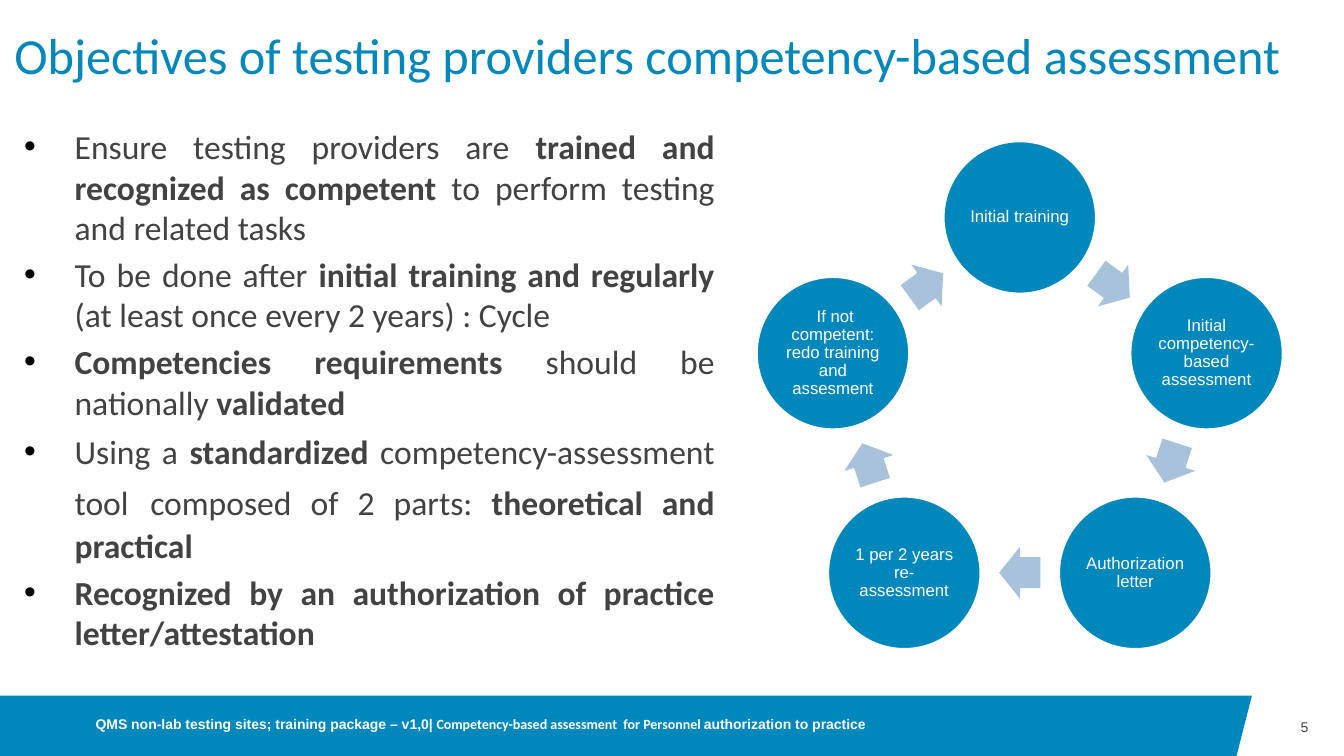
from math import cos, radians, sin

from lxml.etree import SubElement
from pptx import Presentation
from pptx.dml.color import RGBColor
from pptx.enum.shapes import MSO_SHAPE
from pptx.enum.text import MSO_ANCHOR, MSO_AUTO_SIZE, PP_ALIGN
from pptx.oxml.ns import qn
from pptx.util import Cm, Pt

BLUE, LIGHT_BLUE, GREY, WHITE, BLACK = "0087BC", "A7C2DA", "424242", "FFFFFF", "000000"


def color(hex_code):
    return RGBColor.from_string(hex_code)


def prepare_frame(shape, margin):
    frame = shape.text_frame
    frame.word_wrap = True
    frame.auto_size = MSO_AUTO_SIZE.NONE
    frame.vertical_anchor = MSO_ANCHOR.MIDDLE
    frame.margin_left = frame.margin_right = Cm(margin)
    frame.margin_top = frame.margin_bottom = Cm(margin)
    return frame


presentation = Presentation()
presentation.slide_width, presentation.slide_height = Cm(33.87), Cm(19.05)
slide = presentation.slides.add_slide(presentation.slide_layouts[1])
title, body = slide.placeholders

# Footer band
builder = slide.shapes.build_freeform(Cm(0), Cm(17.53))
builder.add_line_segments(
    [(Cm(31.55), Cm(17.53)), (Cm(31.15), Cm(19.1)), (Cm(0), Cm(19.1))], close=True)
band = builder.convert_to_shape()
band.shadow.inherit = False
band.fill.solid()
band.fill.fore_color.rgb = color(BLUE)
band.line.fill.background()

# Slide number
number_box = slide.shapes.add_textbox(Cm(31.55), Cm(17.53), Cm(1.42), Cm(1.6))
paragraph = prepare_frame(number_box, 0).paragraphs[0]
paragraph.text = "5"
paragraph.alignment = PP_ALIGN.RIGHT
paragraph.font.name, paragraph.font.size = "Arial", Pt(10)
paragraph.font.color.rgb = color(GREY)

# Title
title.left, title.top, title.width, title.height = Cm(0.36), Cm(0.1), Cm(33.87), Cm(2.74)
paragraph = prepare_frame(title, 0).paragraphs[0]
paragraph.text = "Objectives of testing providers competency-based assessment"
paragraph.alignment = PP_ALIGN.LEFT
paragraph.line_spacing = 0.9
paragraph.font.name, paragraph.font.size = "Calibri", Pt(36)
paragraph.font.color.rgb = color(BLUE)

# Objectives: space before, then runs of (text, bold, size)
objectives = [
    (0, [("Ensure testing providers are ", False, 24),
         ("trained and recognized as competent", True, 24),
         (" to perform testing and related tasks", False, 24)]),
    (4.8, [("To be done after ", False, 24),
           ("initial training and regularly ", True, 24),
           ("(at least once every 2 years) : Cycle", False, 24)]),
    (4.8, [("Competencies requirements ", True, 24),
           ("should be nationally ", False, 24),
           ("validated", True, 24)]),
    (6.4, [("Using a ", False, 24),
           ("standardized", True, 24),
           (" competency-assessment tool", False, 24),
           (" ", False, 32),
           ("composed of 2 parts: ", False, 24),
           ("theoretical and practical ", True, 24)]),
    (4.8, [("Recognized by an authorization of practice letter/attestation", True, 24)]),
]
body.left, body.top, body.width, body.height = Cm(0.36), Cm(3.05), Cm(17.9), Cm(14.22)
frame = prepare_frame(body, 0.13)
frame.vertical_anchor = MSO_ANCHOR.TOP
frame.margin_left = frame.margin_right = Cm(0.25)
for index, (space_before, runs) in enumerate(objectives):
    paragraph = frame.add_paragraph() if index else frame.paragraphs[0]
    paragraph.alignment = PP_ALIGN.JUSTIFY
    paragraph.space_before = Pt(space_before)
    properties = paragraph._p.get_or_add_pPr()
    properties.set("marL", str(Cm(1.27)))
    properties.set("indent", str(Cm(-1.27)))
    bullet_color = SubElement(properties, qn("a:buClr"))
    SubElement(bullet_color, qn("a:srgbClr"), val=BLACK)
    SubElement(properties, qn("a:buFont"), typeface="Arial")
    SubElement(properties, qn("a:buChar"), char="•")
    paragraph.font.name = "Calibri"
    paragraph.font.color.rgb = color(GREY)
    for text, bold, size in runs:
        run = paragraph.add_run()
        run.text = text
        run.font.bold, run.font.size = bold, Pt(size)

# Assessment cycle: steps every 72 degrees, an arrow halfway to the next step
steps = [
    "Initial training",
    "Initial competency-based assessment",
    "Authorization letter",
    "1 per 2 years re-assessment",
    " If not competent: redo training and assesment",
]
center_x, center_y = 25.7, 10.43
step_radius, arrow_radius = 4.95, 4.0
diameter, arrow_width, arrow_height = 3.86, 1.04, 1.3
step_angle = 360 / len(steps)
for index, step in enumerate(steps):
    angle = index * step_angle
    x = center_x + step_radius * sin(radians(angle))
    y = center_y - step_radius * cos(radians(angle))
    circle = slide.shapes.add_shape(
        MSO_SHAPE.OVAL, Cm(x - diameter / 2), Cm(y - diameter / 2), Cm(diameter), Cm(diameter))
    circle.shadow.inherit = False
    circle.fill.solid()
    circle.fill.fore_color.rgb = color(BLUE)
    circle.line.color.rgb = color(WHITE)
    circle.line.width = Pt(2)
    paragraph = prepare_frame(circle, 0.04).paragraphs[0]
    paragraph.text = step
    paragraph.alignment = PP_ALIGN.CENTER
    paragraph.line_spacing = 0.9
    paragraph.font.name, paragraph.font.size = "Arial", Pt(12)
    paragraph.font.color.rgb = color(WHITE)

    angle += step_angle / 2
    x = center_x + arrow_radius * sin(radians(angle))
    y = center_y - arrow_radius * cos(radians(angle))
    arrow = slide.shapes.add_shape(
        MSO_SHAPE.RIGHT_ARROW, Cm(x - arrow_width / 2), Cm(y - arrow_height / 2),
        Cm(arrow_width), Cm(arrow_height))
    arrow.rotation = angle
    arrow.adjustments[0], arrow.adjustments[1] = 0.6, 0.5
    arrow.shadow.inherit = False
    arrow.fill.solid()
    arrow.fill.fore_color.rgb = color(LIGHT_BLUE)
    arrow.line.fill.background()

# Footer text
footer = slide.shapes.add_textbox(Cm(2.41), Cm(17.53), Cm(20.32), Cm(1.4))
paragraph = prepare_frame(footer, 0).paragraphs[0]
paragraph.font.size, paragraph.font.bold = Pt(10), True
paragraph.font.color.rgb = color(WHITE)
for text, font_name in [
    ("QMS non-lab testing sites; training package – v1,0| ", "Arial"),
    ("Competency-based assessment  for Personnel ", "Calibri"),
    ("authorization to practice", "Arial"),
]:
    run = paragraph.add_run()
    run.text = text
    run.font.name = font_name

presentation.save("out.pptx")
